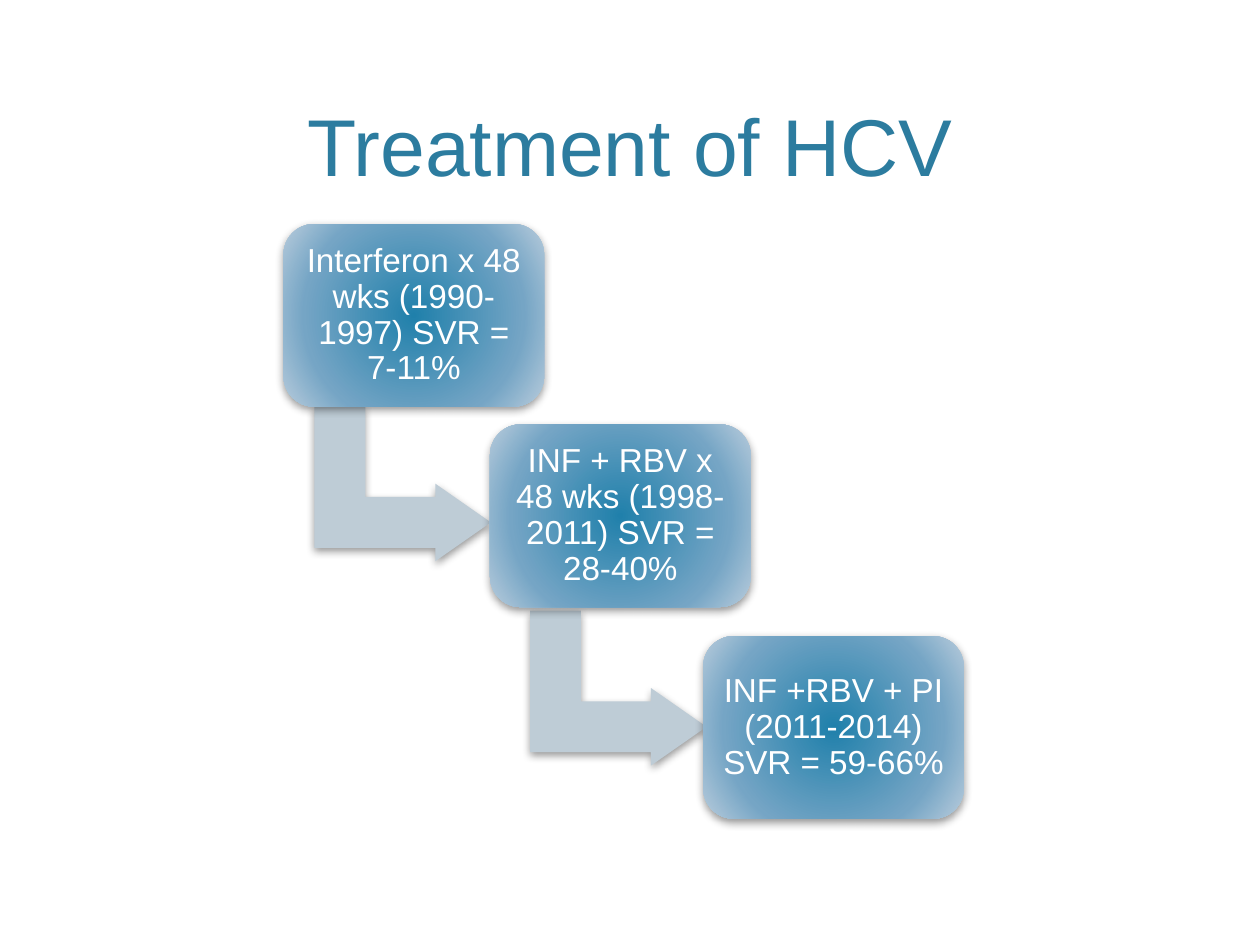
import lxml.etree
import pptx
import pptx.dml.color
import pptx.enum.shapes
import pptx.enum.text
import pptx.oxml
import pptx.oxml.ns
import pptx.util

Pt = pptx.util.Pt
SHAPE = pptx.enum.shapes.MSO_SHAPE
ANCHOR = pptx.enum.text.MSO_ANCHOR
COLORS = {"title": "2C7C9F", "arrow": "BECCD6", "text": "FFFFFF", "shadow": "000000",
          "center": "2080AB", "middle": "75A5C5", "edge": "B8CCDC"}
NS = pptx.oxml.ns.nsdecls("a")


def rgb(name):
    """Return the named colour."""
    return pptx.dml.color.RGBColor.from_string(COLORS[name])


def write(tf, text, size, color, anchor, inset=None, spacing=1.0):
    """Write centred, wrapped text into a text frame."""
    tf.word_wrap = True
    tf.vertical_anchor = anchor
    if inset is not None:
        tf.margin_left = tf.margin_right = tf.margin_top = tf.margin_bottom = Pt(inset)
    p = tf.paragraphs[0]
    p.alignment = pptx.enum.text.PP_ALIGN.CENTER
    p.line_spacing = spacing
    r = p.add_run()
    r.text = text
    r.font.name = "Arial"
    r.font.size = Pt(size)
    r.font.color.rgb = rgb(color)


class Deck:
    """Hold the style and the current slide."""

    def __init__(self):
        """Start a deck with one blank slide."""
        self.prs = pptx.Presentation()
        self.prs.slide_width, self.prs.slide_height = Pt(720), Pt(540)
        self.s = self.prs.slides.add_slide(self.prs.slide_layouts[6])

    def title(self, text, x, y, w, h):
        """Add the slide title."""
        sp = self.s.shapes.add_textbox(Pt(x), Pt(y), Pt(w), Pt(h))
        write(sp.text_frame, text, 46, "title", ANCHOR.BOTTOM)

    def shape(self, kind, x, y, w, h, adjustments):
        """Add an unlined preset shape with a soft shadow below it."""
        sp = self.s.shapes.add_shape(kind, Pt(x), Pt(y), Pt(w), Pt(h))
        for i, value in enumerate(adjustments):
            sp.adjustments[i] = value
        sp.line.fill.background()
        sp.shadow.inherit = False
        effects = sp._element.spPr.find(pptx.oxml.ns.qn("a:effectLst"))
        effects.append(pptx.oxml.parse_xml(
            f'<a:outerShdw {NS} blurRad="{Pt(5)}" dist="{Pt(2)}" dir="5400000" rotWithShape="0">'
            f'<a:srgbClr val="{COLORS["shadow"]}"><a:alpha val="40000"/></a:srgbClr></a:outerShdw>'))
        return sp

    def arrow(self, x, y):
        """Add an arrow that runs down and then right."""
        sp = self.shape(SHAPE.BENT_UP_ARROW, x, y, 88.6, 100.8, (0.328, 0.25, 0.358))
        sp.rotation = 90
        sp.fill.solid()
        sp.fill.fore_color.rgb = rgb("arrow")

    def box(self, text, x, y):
        """Add a rounded box with a radial gradient and its text."""
        sp = self.shape(SHAPE.ROUNDED_RECTANGLE, x, y, 149, 104.4, (0.167,))
        sp.fill.gradient()
        grad = sp._element.spPr.find(pptx.oxml.ns.qn("a:gradFill"))
        stops = "".join(f'<a:gs pos="{pos}000"><a:srgbClr val="{COLORS[name]}"/></a:gs>'
                        for pos, name in ((0, "center"), (69, "middle"), (100, "edge")))
        grad.getparent().replace(grad, pptx.oxml.parse_xml(
            f'<a:gradFill {NS} rotWithShape="1"><a:gsLst>{stops}</a:gsLst><a:path path="circle">'
            '<a:fillToRect l="50000" t="50000" r="50000" b="50000"/></a:path></a:gradFill>'))
        write(sp.text_frame, text, 19, "text", ANCHOR.MIDDLE, inset=5.7, spacing=0.9)


def main():
    """Build the slide."""
    deck = Deck()
    deck.title("Treatment of HCV", 43.2, 8.6, 633.6, 105.1)
    steps = (
        ("Interferon x 48 wks (1990-1997) SVR = 7-11%", (162, 128), (185.8, 226)),
        ("INF + RBV x 48 wks (1998-2011) SVR = 28-40%", (280, 242.5), (309, 342.8)),
        ("INF +RBV + PI (2011-2014) SVR = 59-66%", (401.8, 363.5), None),
    )
    for text, box, arrow in steps:
        if arrow:
            deck.arrow(*arrow)
        deck.box(text, *box)
    deck.prs.save("out.pptx")


if __name__ == "__main__":
    main()
